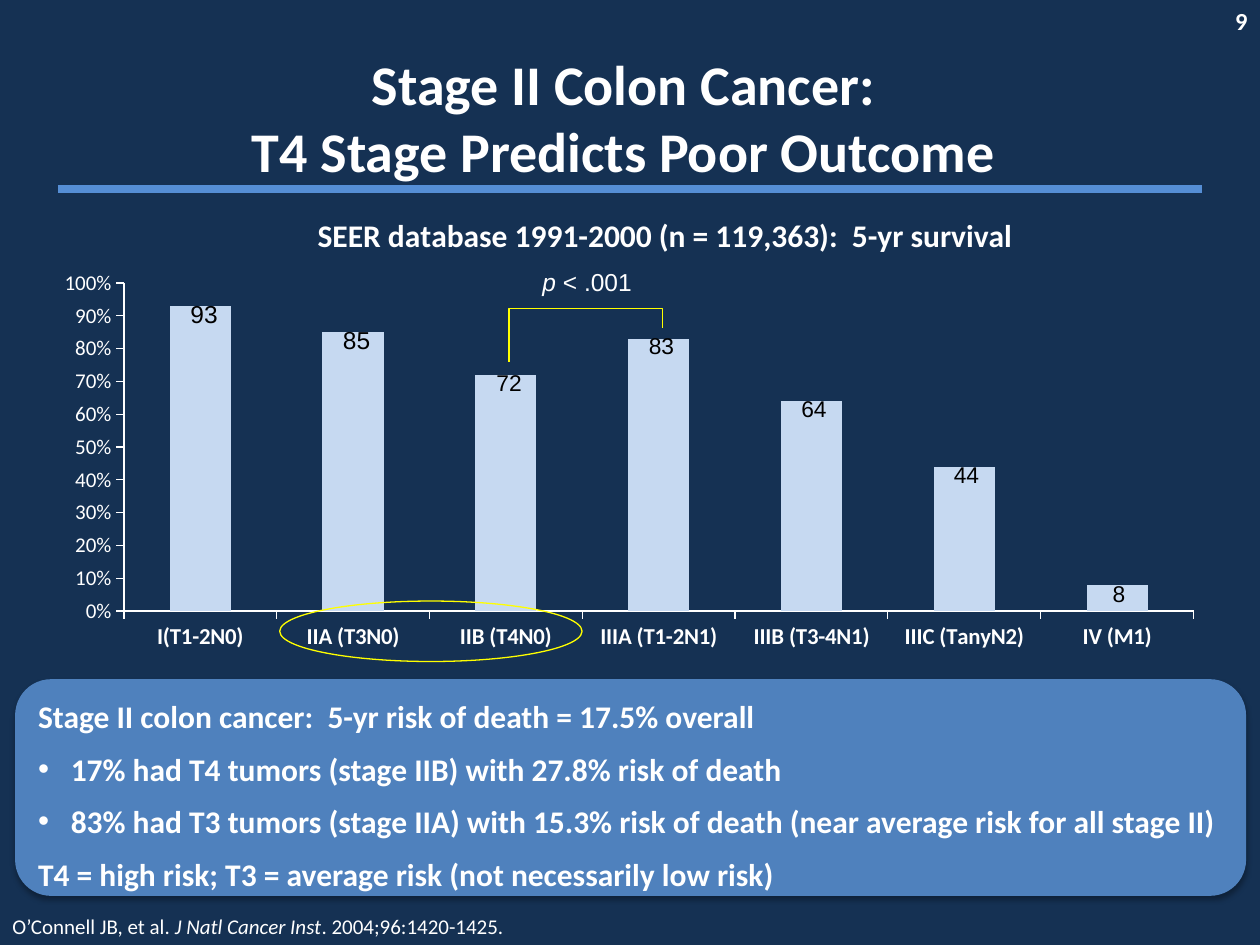
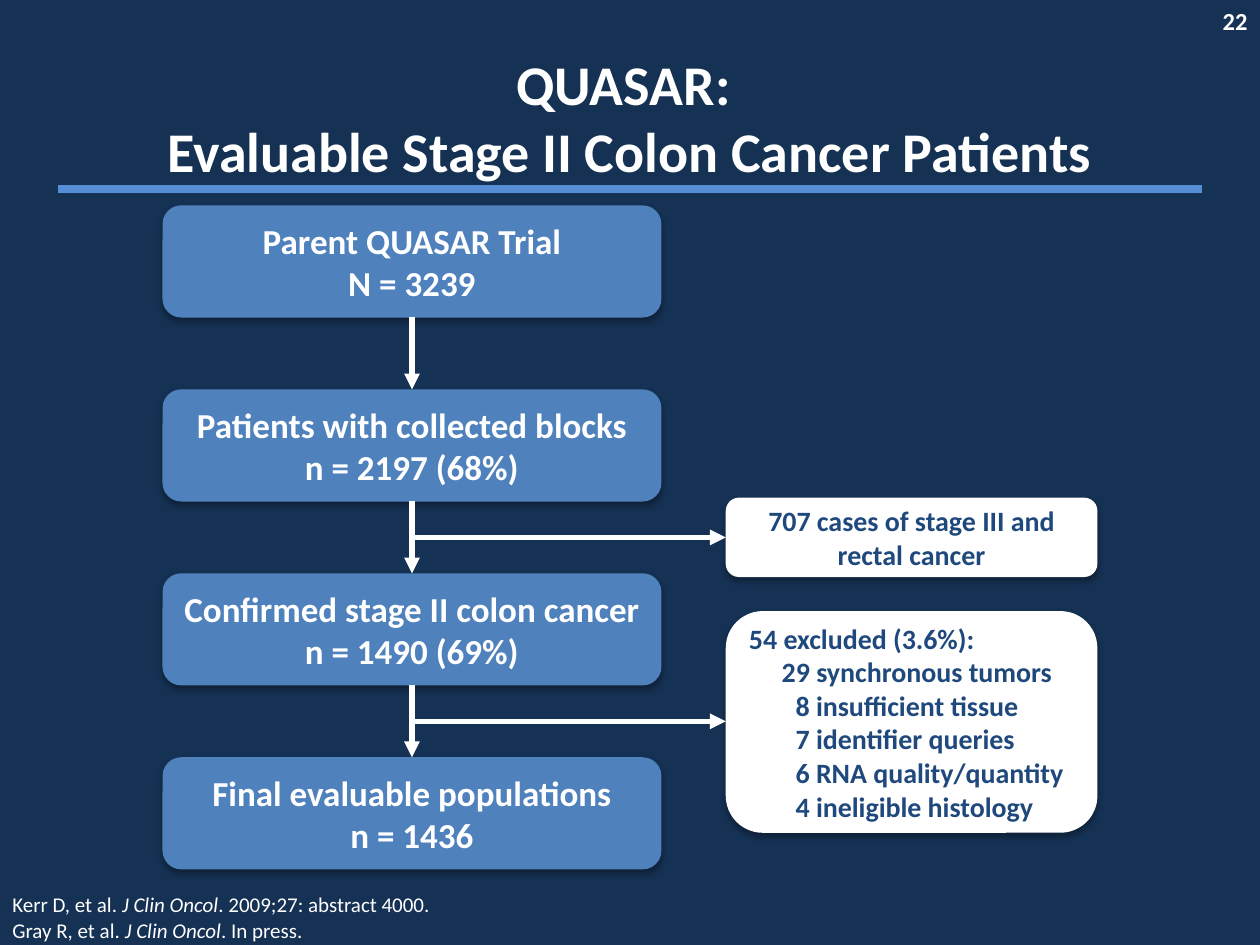
from lxml.etree import SubElement
from pptx import Presentation
from pptx.chart.data import CategoryChartData
from pptx.dml.color import RGBColor
from pptx.enum.chart import XL_CHART_TYPE as ChartType, XL_TICK_MARK as Tick
from pptx.enum.shapes import MSO_CONNECTOR as Connector, MSO_SHAPE as Shape
from pptx.enum.text import MSO_ANCHOR as Anchor, PP_ALIGN as Align
from pptx.oxml import parse_xml
from pptx.oxml.ns import qn
from pptx.util import Inches, Pt

COLORS = {
    "background": "153153",
    "rule": "558ED5",
    "panel": "4F81BD",
    "bar": "C6D9F1",
    "navy": "1F497D",
    "mark": "FFFF00",
    "white": "FFFFFF",
    "black": "000000",
}
BODY, LABEL = "Calibri", "Arial"
HANG = 0.26
SHADOW = (
    '<a:outerShdw xmlns:a="http://schemas.openxmlformats.org/drawingml/2006/main"'
    f' blurRad="{Pt(3.5)}" dist="{Pt(2.2)}" dir="5400000" rotWithShape="0">'
    '<a:srgbClr val="000000"><a:alpha val="32000"/></a:srgbClr></a:outerShdw>'
)


def rgb(name):
    return RGBColor.from_string(COLORS[name])


def indent(paragraph, left, first=0.0, bullet=None):
    props = paragraph._p.get_or_add_pPr()
    props.set("marL", str(Inches(left)))
    props.set("indent", str(Inches(first)))
    if bullet:
        SubElement(props, qn("a:buFont"), typeface=LABEL)
        SubElement(props, qn("a:buChar"), char=bullet)


def place(part, position, **fractions):
    """Give a chart part a manual layout, in fractions of the chart frame."""
    for old in part.findall(qn("c:layout")):
        part.remove(old)
    layout = part.makeelement(qn("c:layout"))
    part.insert(position, layout)
    manual = SubElement(layout, qn("c:manualLayout"))
    if "w" in fractions:
        SubElement(manual, qn("c:layoutTarget"), val="inner")
    for side in "xy":
        SubElement(manual, qn(f"c:{side}Mode"), val="edge")
    for side, value in fractions.items():
        SubElement(manual, qn(f"c:{side}"), val=str(value))


class Deck:
    def __init__(self):
        self.prs = Presentation()
        self.prs.slide_width, self.prs.slide_height = Inches(10), Inches(7.5)

    def new_slide(self, number, title):
        self.slide = self.prs.slides.add_slide(self.prs.slide_layouts[6])
        background = self.slide.background.fill
        background.solid()
        background.fore_color.rgb = rgb("background")
        self.text((9.25, 0, 0.75, 0.4), [number], 14, bold=True, align=Align.RIGHT)
        self.line((0.46, 1.5), (9.54, 1.5), "rule", 4.5)
        heading = self.text((0.5, 0.3, 9, 1.25), title, 32, bold=True, align=Align.CENTER)
        heading.vertical_anchor = Anchor.MIDDLE

    def set_lines(self, frame, lines, size, color="white", bold=False,
                  align=Align.LEFT, font=BODY):
        """Add one paragraph per line; text between asterisks is italic."""
        frame.word_wrap = True
        for i, line in enumerate(lines):
            paragraph = frame.add_paragraph() if i else frame.paragraphs[0]
            paragraph.alignment = align
            self.style(paragraph.font, size, color, bold, font)
            for j, part in enumerate(line.split("*")):
                if part:
                    run = paragraph.add_run()
                    run.text = part
                    if j % 2:
                        run.font.italic = True
        return frame

    def style(self, font, size, color="white", bold=False, name=BODY):
        font.size, font.name, font.bold = Pt(size), name, bold
        font.color.rgb = rgb(color)

    def text(self, box, lines, size, **look):
        frame = self.slide.shapes.add_textbox(*map(Inches, box)).text_frame
        return self.set_lines(frame, lines, size, **look)

    def chart_label(self, box, words, size, color):
        frame = self.text(box, [words], size, color=color, align=Align.CENTER, font=LABEL)
        frame.margin_left = frame.margin_right = Inches(0.09)
        frame.margin_top = frame.margin_bottom = Inches(0.04)

    def card(self, box, lines, size, fill="panel", color="white", align=Align.CENTER):
        card = self.slide.shapes.add_shape(Shape.ROUNDED_RECTANGLE, *map(Inches, box))
        card.fill.solid()
        card.fill.fore_color.rgb = rgb(fill)
        card.line.fill.background()
        card.shadow.inherit = False
        card._element.spPr.find(qn("a:effectLst")).append(parse_xml(SHADOW))
        card.text_frame.vertical_anchor = Anchor.MIDDLE
        self.set_lines(card.text_frame, lines, size, color, True, align)
        return card

    def line(self, start, end, color="white", width=3.0, arrow=False):
        line = self.slide.shapes.add_connector(
            Connector.STRAIGHT, *map(Inches, (*start, *end)))
        line.line.color.rgb, line.line.width = rgb(color), Pt(width)
        if arrow:
            SubElement(line.line._get_or_add_ln(), qn("a:tailEnd"), type="triangle")
        SubElement(line._element.spPr, qn("a:effectLst"))
        return line

    def outline(self, shape):
        """Leave only a thin yellow outline on a shape."""
        shape.fill.background()
        shape.line.color.rgb, shape.line.width = rgb("mark"), Pt(0.75)
        shape.shadow.inherit = False

    def ellipse(self, box):
        self.outline(self.slide.shapes.add_shape(Shape.OVAL, *map(Inches, box)))

    def bracket(self, *points):
        first, *rest = [(Inches(x), Inches(y)) for x, y in points]
        builder = self.slide.shapes.build_freeform(*first)
        builder.add_line_segments(rest, close=False)
        self.outline(builder.convert_to_shape())

    def column_chart(self, box, title, shares):
        data = CategoryChartData(number_format="0%")
        data.categories = list(shares)
        data.add_series("Series 1", list(shares.values()))
        chart = self.slide.shapes.add_chart(
            ChartType.COLUMN_CLUSTERED, *map(Inches, box), data).chart
        chart.has_legend = False
        self.style(chart.font, 12)
        self.set_lines(chart.chart_title.text_frame, [title], 18, bold=True,
                       align=Align.CENTER)
        place(chart.chart_title._element, 1, x=0.23, y=0.03)
        place(chart._chartSpace.chart.plotArea, 0, x=0.07, y=0.19, w=0.91, h=0.7)

        plot = chart.plots[0]
        plot.gap_width, plot.vary_by_categories = 150, False
        bars = plot.series[0].format.fill
        bars.solid()
        bars.fore_color.rgb = rgb("bar")

        stages, survival = chart.category_axis, chart.value_axis
        for axis in (stages, survival):
            axis.has_major_gridlines = False
            axis.major_tick_mark, axis.minor_tick_mark = Tick.OUTSIDE, Tick.NONE
            axis.format.line.color.rgb = rgb("white")
        self.style(stages.tick_labels.font, 13, bold=True)
        self.style(survival.tick_labels.font, 12)
        survival.minimum_scale, survival.maximum_scale, survival.major_unit = 0, 1, 0.1
        survival.tick_labels.number_format = "0%"
        survival.tick_labels.number_format_is_linked = False


def survival_slide(deck):
    deck.new_slide("9", ["Stage II Colon Cancer: ", "T4 Stage Predicts Poor Outcome "])
    findings = deck.card((0.12, 5.39, 9.77, 1.72), [
        "Stage II colon cancer:  5-yr risk of death = 17.5% overall",
        "17% had T4 tumors (stage IIB) with 27.8% risk of death",
        "83% had T3 tumors (stage IIA) with 15.3% risk of death"
        " (near average risk for all stage II)",
        "T4 = high risk; T3 = average risk (not necessarily low risk)",
    ], 18, align=Align.LEFT)
    for paragraph, bullet in zip(findings.text_frame.paragraphs, (None, "•", "•", None)):
        paragraph.line_spacing = Pt(30)
        indent(paragraph, HANG, -HANG, bullet)
    deck.text((0, 7.2, 5, 0.3),
              ["O’Connell JB, et al. *J Natl Cancer Inst*. 2004;96:1420-1425."], 12)

    shares = {
        "I(T1-2N0)": 0.93, "IIA (T3N0)": 0.85, "IIB (T4N0)": 0.72,
        "IIIA (T1-2N1)": 0.83, "IIIB (T3-4N1)": 0.64, "IIIC (TanyN2)": 0.44,
        "IV (M1)": 0.08,
    }
    deck.column_chart((0.33, 1.54, 9.33, 3.72),
                      "SEER database 1991-2000 (n = 119,363):  5-yr survival", shares)
    zero_y, full_height = 4.87, 2.62
    first_bar, bar_step, label_width = 1.62, 1.21, 0.47
    for i, share in enumerate(shares.values()):
        left = first_bar + i * bar_step - label_width / 2
        top = zero_y - share * full_height - 0.1
        deck.chart_label((left, top, label_width, 0.32), f"{share * 100:.0f}",
                         14 if i < 2 else 13, "black")
    deck.chart_label((4.1, 2.08, 1.12, 0.33), "*p *< .001", 14, "white")
    deck.ellipse((2.22, 4.77, 2.4, 0.48))
    deck.bracket((4.04, 2.87), (4.04, 2.45), (5.26, 2.45), (5.26, 2.6))


def quasar_slide(deck):
    deck.new_slide("22", ["QUASAR: ", "Evaluable Stage II Colon Cancer Patients"])
    deck.text((0, 7.03, 5, 0.5), [
        "Kerr D, et al. *J Clin Oncol*. 2009;27: abstract 4000.",
        "Gray R, et al. *J Clin Oncol*. In press.",
    ], 12)

    left, top, width, height, step = 1.29, 1.63, 3.96, 0.89, 1.46
    steps = [
        ("Parent QUASAR Trial", "N = 3239"),
        ("Patients with collected blocks", "n = 2197 (68%)"),
        ("Confirmed stage II colon cancer", "n = 1490 (69%)"),
        ("Final evaluable populations", "n = 1436"),
    ]
    cards = [deck.card((left, top + i * step, width, height), lines, 20)
             for i, lines in enumerate(steps)]
    center = left + width / 2
    for upper, lower in zip(cards, cards[1:]):
        arrow = deck.line((center, top), (center, top), arrow=True)
        arrow.begin_connect(upper, 2)
        arrow.end_connect(lower, 0)

    side_left, side_width = 5.76, 2.95
    deck.card((side_left, 3.95, side_width, 0.63),
              ["707 cases of stage III and rectal cancer"], 16, "white", "navy")
    excluded = deck.card((side_left, 4.85, side_width, 1.76), [
        "54 excluded (3.6%):",
        "29 synchronous tumors",
        "8 insufficient tissue",
        "7 identifier queries",
        "6 RNA quality/quantity",
        "4 ineligible histology",
    ], 16, "white", "navy", Align.LEFT)
    digit = 0.11
    heading, two_digits, *one_digit = excluded.text_frame.paragraphs
    indent(heading, HANG, -HANG)
    indent(two_digits, HANG)
    for reason in one_digit:
        indent(reason, HANG + digit)

    gap = step - height
    for i in (1, 2):
        y = top + i * step + height + gap / 2
        deck.line((center, y), (side_left, y), arrow=True)


def main():
    deck = Deck()
    survival_slide(deck)
    quasar_slide(deck)
    deck.prs.save("out.pptx")


if __name__ == "__main__":
    main()
